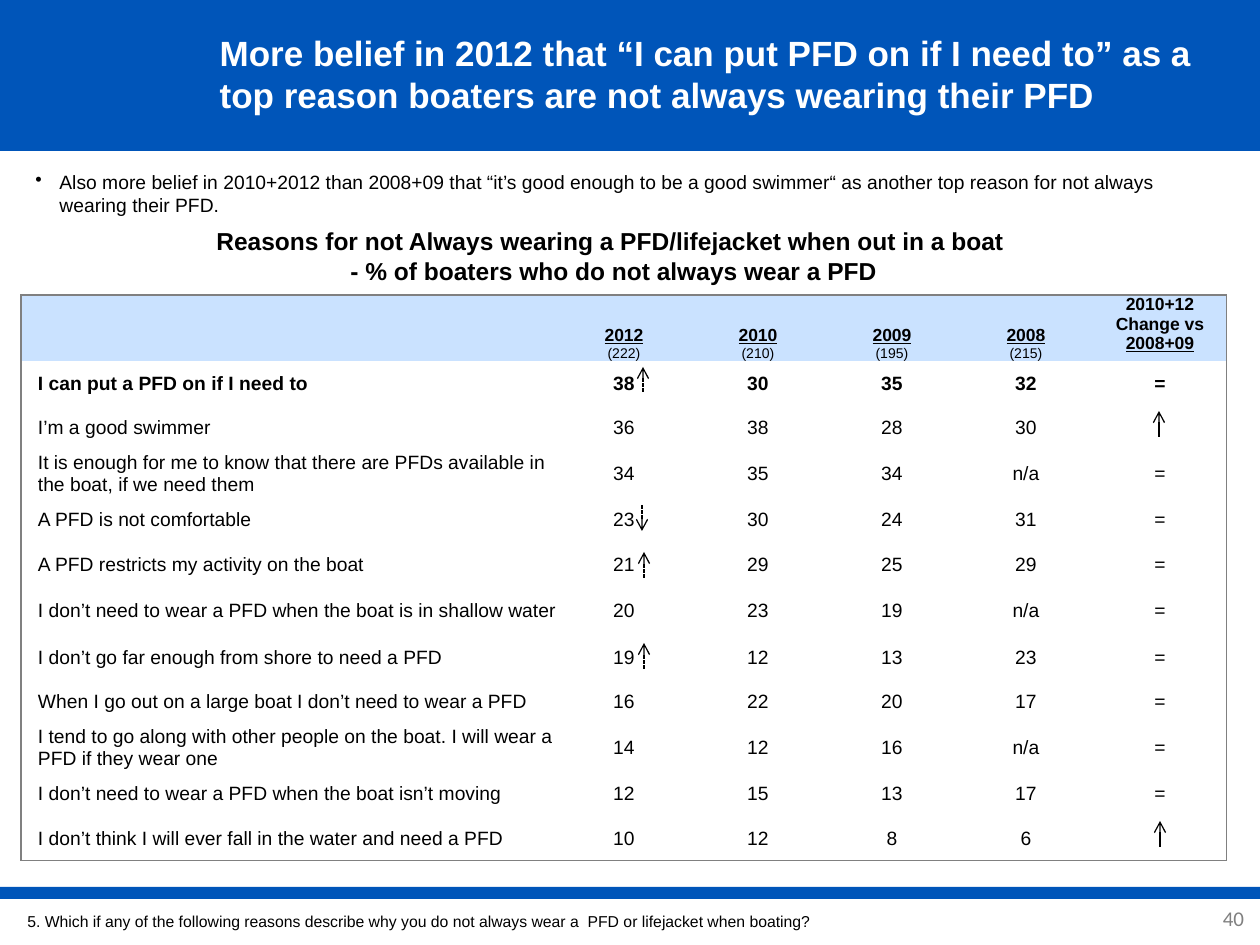
from dataclasses import dataclass

from lxml.etree import SubElement
from pptx import Presentation
from pptx.dml.color import RGBColor
from pptx.enum.dml import MSO_LINE
from pptx.enum.shapes import MSO_CONNECTOR, MSO_SHAPE
from pptx.enum.text import MSO_ANCHOR, PP_ALIGN
from pptx.oxml.ns import qn
from pptx.util import Emu, Pt

EMU_PER_PX = 914400 / 126
BLUE = RGBColor(0x00, 0x55, 0xB9)
PALE_BLUE = RGBColor(0xCA, 0xE2, 0xFF)
GRAY = RGBColor(0x80, 0x80, 0x80)
BLACK = RGBColor(0x00, 0x00, 0x00)
WHITE = RGBColor(0xFF, 0xFF, 0xFF)
NO_STYLE = "{2D5ABB26-0587-4C30-8999-92F81FD0307C}"


def px(length: int) -> Emu:
    return Emu(round(length * EMU_PER_PX))


@dataclass
class Box:
    left: int
    top: int
    width: int
    height: int

    def emu(self) -> tuple:
        return px(self.left), px(self.top), px(self.width), px(self.height)


@dataclass
class Style:
    size: int
    color: RGBColor = BLACK
    bold: bool = False
    underline: bool = False
    font: str = "Arial"


@dataclass
class Reason:
    label: str
    shares: tuple  # 2012, 2010, 2009, 2008
    change: str = "="
    bold: bool = False


@dataclass
class Arrow:
    x: int
    start: int
    end: int
    dashed: bool = True


REASONS = [
    Reason("I can put a PFD on if I need to", (38, 30, 35, 32), bold=True),
    Reason("I’m a good swimmer", (36, 38, 28, 30), ""),
    Reason("It is enough for me to know that there are PFDs available in "
           "the boat, if we need them", (34, 35, 34, "n/a")),
    Reason("A PFD is not comfortable", (23, 30, 24, 31)),
    Reason("A PFD restricts my activity on the boat", (21, 29, 25, 29)),
    Reason("I don’t need to wear a PFD when the boat is in shallow water", (20, 23, 19, "n/a")),
    Reason("I don’t go far enough from shore to need a PFD", (19, 12, 13, 23)),
    Reason("When I go out on a large boat I don’t need to wear a PFD", (16, 22, 20, 17)),
    Reason("I tend to go along with other people on the boat. I will wear a "
           "PFD if they wear one", (14, 12, 16, "n/a")),
    Reason("I don’t need to wear a PFD when the boat isn’t moving", (12, 15, 13, 17)),
    Reason("I don’t think I will ever fall in the water and need a PFD", (10, 12, 8, 6), ""),
]
YEARS = [("2012", 222), ("2010", 210), ("2009", 195), ("2008", 215)]
COLUMN_WIDTHS = [536] + [134] * 5
ROW_HEIGHTS = [66, 45, 44, 48, 44, 45, 48, 45, 44, 48, 45, 44]
ARROWS = [
    Arrow(643, 392, 367),
    Arrow(642, 505, 531),
    Arrow(644, 578, 552),
    Arrow(644, 669, 643),
    Arrow(1159, 437, 411, dashed=False),
    Arrow(1160, 847, 821, dashed=False),
]


def format_runs(paragraph, *styles: Style) -> None:
    """Apply one style per run; the last style serves any further runs."""
    for index, run in enumerate(paragraph.runs):
        style = styles[min(index, len(styles) - 1)]
        font = run.font
        font.name, font.size, font.bold = style.font, Pt(style.size), style.bold
        font.underline = style.underline
        font.color.rgb = style.color
    for line_break in paragraph._p.findall(qn("a:br")):
        SubElement(line_break, qn("a:rPr"), sz=str(styles[0].size * 100))


def add_band(slide, box: Box) -> None:
    band = slide.shapes.add_shape(MSO_SHAPE.RECTANGLE, *box.emu())
    band.shadow.inherit = False
    band.fill.solid()
    band.fill.fore_color.rgb = BLUE
    band.line.fill.background()


def add_text(slide, box: Box, text: str, style: Style,
             align=PP_ALIGN.LEFT, anchor=MSO_ANCHOR.TOP):
    frame = slide.shapes.add_textbox(*box.emu()).text_frame
    frame.word_wrap = True
    frame.vertical_anchor = anchor
    paragraph = frame.paragraphs[0]
    paragraph.text = text
    paragraph.alignment = align
    format_runs(paragraph, style)
    return frame


def set_bullet(paragraph, hang: int) -> None:
    properties = paragraph._p.get_or_add_pPr()
    properties.set("marL", str(px(hang)))
    properties.set("indent", str(-px(hang)))
    SubElement(properties, qn("a:buChar"), char="•")


def fill_cell(cell, text: str, *styles: Style, align=PP_ALIGN.CENTER,
              anchor=MSO_ANCHOR.MIDDLE, indent: int = 0) -> None:
    cell.margin_left = px(indent)
    cell.margin_right = cell.margin_top = cell.margin_bottom = 0
    cell.vertical_anchor = anchor
    paragraph = cell.text_frame.paragraphs[0]
    paragraph.text = text
    paragraph.alignment = align
    format_runs(paragraph, *styles)


def set_borders(cell, sides: str) -> None:
    for side in sides:
        line = SubElement(cell._tc.get_or_add_tcPr(), qn(f"a:ln{side}"), w=str(Pt(0.75)))
        SubElement(SubElement(line, qn("a:solidFill")), qn("a:srgbClr"), val=str(GRAY))


def add_reasons_table(slide, left: int, top: int) -> None:
    rows, columns = len(ROW_HEIGHTS), len(COLUMN_WIDTHS)
    box = Box(left, top, sum(COLUMN_WIDTHS), sum(ROW_HEIGHTS))
    table = slide.shapes.add_table(rows, columns, *box.emu()).table
    table._tbl.tblPr.find(qn("a:tableStyleId")).text = NO_STYLE
    table.first_row = table.horz_banding = False
    for column, width in zip(table.columns, COLUMN_WIDTHS):
        column.width = px(width)
    for row, height in zip(table.rows, ROW_HEIGHTS):
        row.height = px(height)

    # Header row
    heading, underlined = Style(10, bold=True), Style(10, bold=True, underline=True)
    fill_cell(table.cell(0, 0), "", heading)
    for column, (year, base) in enumerate(YEARS, start=1):
        fill_cell(table.cell(0, column), f"{year}\v({base})", underlined, Style(8),
                  anchor=MSO_ANCHOR.BOTTOM)
    fill_cell(table.cell(0, columns - 1), "2010+12\vChange vs\v2008+09",
              heading, heading, underlined, anchor=MSO_ANCHOR.TOP)

    # One row per reason
    for row, reason in enumerate(REASONS, start=1):
        style = Style(11, bold=reason.bold)
        fill_cell(table.cell(row, 0), reason.label, style, align=PP_ALIGN.LEFT, indent=17)
        for column, value in enumerate((*reason.shares, reason.change), start=1):
            fill_cell(table.cell(row, column), str(value), style)

    # Outer frame and header fill
    for row in range(rows):
        for column in range(columns):
            cell = table.cell(row, column)
            edges = {"L": column == 0, "R": column == columns - 1,
                     "T": row == 0, "B": row == rows - 1}
            set_borders(cell, "".join(side for side, outer in edges.items() if outer))
            if row == 0:
                cell.fill.solid()
                cell.fill.fore_color.rgb = PALE_BLUE
            else:
                cell.fill.background()


def add_arrow(slide, arrow: Arrow) -> None:
    trend = slide.shapes.add_connector(MSO_CONNECTOR.STRAIGHT, px(arrow.x), px(arrow.start),
                                       px(arrow.x), px(arrow.end))
    trend.line.color.rgb = BLACK
    trend.line.width = Pt(0.75)
    if arrow.dashed:
        trend.line.dash_style = MSO_LINE.SQUARE_DOT
    SubElement(trend.line._get_or_add_ln(), qn("a:tailEnd"), type="arrow")
    SubElement(trend._element.spPr, qn("a:effectLst"))


def main() -> None:
    presentation = Presentation()
    presentation.slide_width, presentation.slide_height = px(1260), px(945)
    slide = presentation.slides.add_slide(presentation.slide_layouts[5])

    # Bands at top and bottom
    add_band(slide, Box(0, 0, 1260, 151))
    add_band(slide, Box(0, 887, 1260, 12))

    # Title, raised above the top band
    title = slide.shapes.title
    title.left, title.top, title.width, title.height = Box(207, 0, 1019, 148).emu()
    title.text_frame.text = ("More belief in 2012 that “I can put PFD on if I need to” as a "
                             "top reason boaters are not always wearing their PFD")
    title.text_frame.vertical_anchor = MSO_ANCHOR.MIDDLE
    headline = title.text_frame.paragraphs[0]
    headline.alignment = PP_ALIGN.LEFT
    format_runs(headline, Style(20, WHITE, bold=True))
    slide.shapes._spTree.append(title._element)

    # Page number, finding, question and table heading
    page_number = add_text(slide, Box(1179, 893, 80, 50), "40", Style(12, GRAY, font="Calibri"),
                           PP_ALIGN.RIGHT, MSO_ANCHOR.MIDDLE)
    page_number.margin_right = px(15)
    finding = add_text(slide, Box(23, 164, 1201, 59),
                       "Also more belief in 2010+2012 than 2008+09 that “it’s good enough to be "
                       "a good swimmer“ as another top reason for not always wearing their PFD.",
                       Style(11))
    set_bullet(finding.paragraphs[0], 24)
    add_text(slide, Box(15, 897, 1149, 48),
             "5. Which if any of the following reasons describe why you do not always wear a  "
             "PFD or lifejacket when boating?", Style(9), anchor=MSO_ANCHOR.MIDDLE)
    add_text(slide, Box(88, 220, 1045, 66),
             "Reasons for not Always wearing a PFD/lifejacket when out in a boat\v"
             " - % of boaters who do not always wear a PFD", Style(14, bold=True), PP_ALIGN.CENTER)

    # Table with its trend arrows
    add_reasons_table(slide, 21, 295)
    for arrow in ARROWS:
        add_arrow(slide, arrow)

    presentation.save("out.pptx")


if __name__ == "__main__":
    main()
